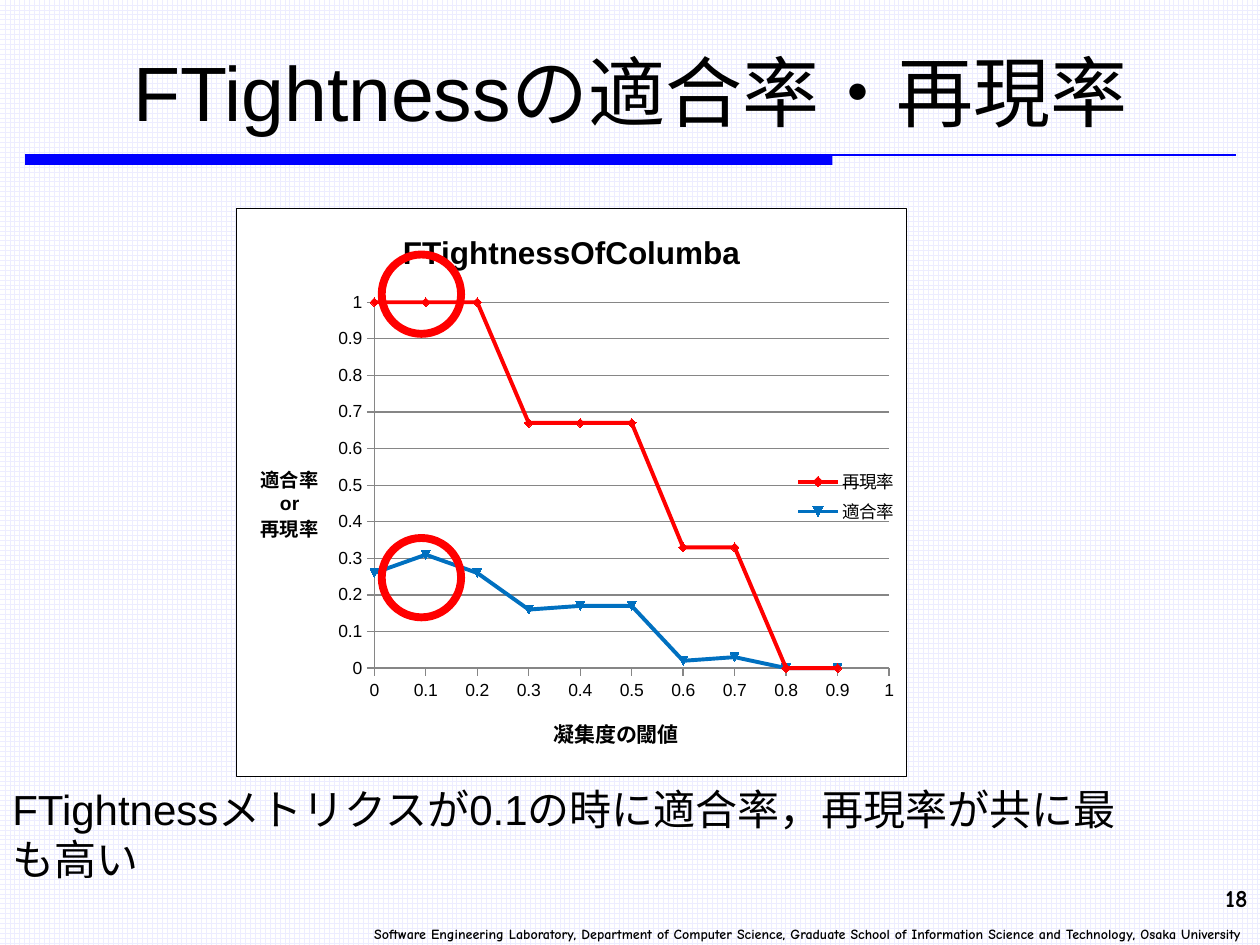
from lxml import etree
from pptx import Presentation
from pptx.chart.data import XyChartData
from pptx.dml.color import RGBColor
from pptx.enum.chart import XL_CHART_TYPE, XL_LEGEND_POSITION, XL_TICK_MARK
from pptx.enum.dml import MSO_PATTERN
from pptx.enum.shapes import MSO_CONNECTOR, MSO_SHAPE
from pptx.enum.text import MSO_ANCHOR, PP_ALIGN
from pptx.oxml import parse_xml
from pptx.oxml.ns import nsdecls, qn
from pptx.util import Inches, Pt

BLACK = RGBColor(0x00, 0x00, 0x00)
WHITE = RGBColor(0xFF, 0xFF, 0xFF)
GRID = RGBColor(0xED, 0xED, 0xFF)
BLUE = RGBColor(0x00, 0x00, 0xFF)
RED = RGBColor(0xFF, 0x00, 0x00)
SERIES_BLUE = RGBColor(0x00, 0x70, 0xC0)
GREY = RGBColor(0x86, 0x86, 0x86)

RECALL = [1, 1, 1, 0.67, 0.67, 0.67, 0.33, 0.33, 0, 0]
PRECISION = [0.26, 0.31, 0.26, 0.16, 0.17, 0.17, 0.02, 0.03, 0, 0]
SERIES = [("再現率", RECALL, RED), ("適合率", PRECISION, SERIES_BLUE)]


def set_font(font, size, bold=False, name="Arial"):
    values = {"size": Pt(size), "bold": bold, "name": name}
    for attribute, value in values.items():
        setattr(font, attribute, value)
    font.color.rgb = BLACK


def add_text(slide, box, text, size, align=PP_ALIGN.LEFT, anchor=MSO_ANCHOR.TOP,
             wrap=True, **font_format):
    shape = slide.shapes.add_textbox(*(Inches(value) for value in box))
    frame = shape.text_frame
    frame.word_wrap = wrap
    frame.vertical_anchor = anchor
    paragraph = frame.paragraphs[0]
    paragraph.alignment = align
    run = paragraph.add_run()
    run.text = text
    set_font(run.font, size, **font_format)


def add_header(slide, left, top, width, height):
    add_text(slide, (left, top, width, height), "FTightnessの適合率・再現率", 44,
             PP_ALIGN.CENTER, MSO_ANCHOR.MIDDLE)
    # Thick bar under two thirds of the title, thin rule under all of it
    rule_top = Inches(top + height)
    bar = slide.shapes.add_shape(MSO_SHAPE.RECTANGLE, Inches(left), rule_top,
                                 Inches(width * 2 / 3), Inches(0.08))
    bar.shadow.inherit = False
    bar.fill.solid()
    bar.fill.fore_color.rgb = BLUE
    bar.line.fill.background()
    rule = slide.shapes.add_connector(MSO_CONNECTOR.STRAIGHT, Inches(left), rule_top,
                                      Inches(left + width), rule_top)
    rule.line.color.rgb = BLUE
    rule.line.width = Pt(0.75)
    etree.SubElement(rule._element.spPr, qn("a:effectLst"))


def set_layout(element, **places):
    """Place a chart part by fractions of the chart's size."""
    for layout in element.findall(qn("c:layout")):
        element.remove(layout)
    layout = etree.Element(qn("c:layout"))
    manual = etree.SubElement(layout, qn("c:manualLayout"))
    if "w" in places:
        etree.SubElement(manual, qn("c:layoutTarget")).set("val", "inner")
    for axis in ("x", "y"):
        etree.SubElement(manual, qn(f"c:{axis}Mode")).set("val", "edge")
    for key, value in places.items():
        etree.SubElement(manual, qn(f"c:{key}")).set("val", str(value))
    leading = [child for child in element if child.tag in (qn("c:tx"), qn("c:legendPos"))]
    element.insert(len(leading), layout)


def set_title(owner, text, size):
    frame = owner.text_frame
    frame.text = text
    for paragraph in frame.paragraphs:
        for run in paragraph.runs:
            set_font(run.font, size, bold=True)


def format_axis(axis, title, size, gridlines):
    values = {"minimum_scale": 0, "maximum_scale": 1, "major_unit": 0.1,
              "has_major_gridlines": gridlines, "major_tick_mark": XL_TICK_MARK.OUTSIDE,
              "minor_tick_mark": XL_TICK_MARK.NONE, "has_title": True}
    for attribute, value in values.items():
        setattr(axis, attribute, value)
    axis.tick_labels.number_format = "General"
    axis.tick_labels.number_format_is_linked = False
    lines = [axis.format.line]
    if gridlines:
        lines.append(axis.major_gridlines.format.line)
    for line in lines:
        line.color.rgb = GREY
        line.width = Pt(0.75)
    set_title(axis.axis_title, title, size)


def add_chart(slide, left, top, width, height):
    data = XyChartData()
    for name, values, _ in SERIES:
        series = data.add_series(name)
        for index, value in enumerate(values):
            series.add_data_point(index / 10, value)
    chart = slide.shapes.add_chart(XL_CHART_TYPE.XY_SCATTER_LINES, Inches(left), Inches(top),
                                   Inches(width), Inches(height), data).chart
    set_font(chart.font, 10)
    chart.has_title = True
    set_title(chart.chart_title, "FTightnessOfColumba", 18)

    # Axes
    format_axis(chart.category_axis, "凝集度の閾値", 12, False)
    format_axis(chart.value_axis, "適合率\nor\n再現率", 11, True)
    value_title = chart.value_axis.axis_title
    body = value_title.text_frame._txBody.bodyPr
    body.set("rot", "0")
    body.set("vert", "horz")
    set_layout(value_title._element, x=0.03, y=0.44)
    set_layout(chart._chartSpace.chart.plotArea, x=0.206, y=0.165, w=0.768, h=0.644)

    # Legend over the plot
    chart.has_legend = True
    chart.legend.position = XL_LEGEND_POSITION.RIGHT
    chart.legend.include_in_layout = False
    set_layout(chart.legend._element, x=0.83, y=0.45)

    # Series; automatic markers follow the series index
    plot = chart.plots[0]
    plot.vary_by_categories = False
    for index, (series, (_, _, color)) in enumerate(zip(plot.series, SERIES), start=1):
        for tag in ("c:idx", "c:order"):
            series._element.find(qn(tag)).set("val", str(index))
        series.smooth = False
        series.format.line.color.rgb = color
        series.format.line.width = Pt(2.25)
        series.marker.size = 5
        series.marker.format.fill.solid()
        series.marker.format.fill.fore_color.rgb = color
        series.marker.format.line.color.rgb = color

    # White panel with a thin black border
    panel = parse_xml(
        f'<c:spPr {nsdecls("c", "a")}><a:solidFill><a:srgbClr val="{WHITE}"/></a:solidFill>'
        f'<a:ln w="{Pt(0.75)}"><a:solidFill><a:srgbClr val="{BLACK}"/></a:solidFill></a:ln>'
        '</c:spPr>')
    chart._chartSpace.find(qn("c:txPr")).addprevious(panel)


def add_ring(slide, left, top, size):
    ring = slide.shapes.add_shape(MSO_SHAPE.FLOWCHART_CONNECTOR, Inches(left), Inches(top),
                                  Inches(size), Inches(size))
    ring.shadow.inherit = False
    ring.fill.background()
    ring.line.color.rgb = RED
    ring.line.width = Pt(4.5)


def add_footer(slide, right, top):
    style = {"align": PP_ALIGN.RIGHT, "bold": True, "name": "Comic Neue"}
    add_text(slide, (right - 0.51, top, 0.51, 0.28), "18", 14, **style)
    add_text(slide, (right - 8.11, top + 0.34, 8.07, 0.23),
             "Software Engineering Laboratory, Department of Computer Science, "
             "Graduate School of Information Science and Technology, Osaka University",
             8, wrap=False, **style)


def main():
    presentation = Presentation()
    presentation.slide_width = Inches(10)
    presentation.slide_height = Inches(7.5)
    slide = presentation.slides.add_slide(presentation.slide_layouts[6])
    background = slide.background.fill
    background.patterned()
    background.pattern = MSO_PATTERN.LARGE_GRID
    background.fore_color.rgb = GRID
    background.back_color.rgb = WHITE

    add_header(slide, 0.2, 0.21, 9.61, 1.02)
    add_chart(slide, 1.87, 1.65, 5.33, 4.52)
    # Rings around both values at the 0.1 threshold
    for top in (2.02, 4.27):
        add_ring(slide, 3.03, top, 0.63)
    add_text(slide, (0, 6.17, 8.97, 0.5),
             "FTightnessメトリクスが0.1の時に適合率，再現率が共に最も高い", 24)
    add_footer(slide, 10, 6.96)
    presentation.save("out.pptx")


if __name__ == "__main__":
    main()
